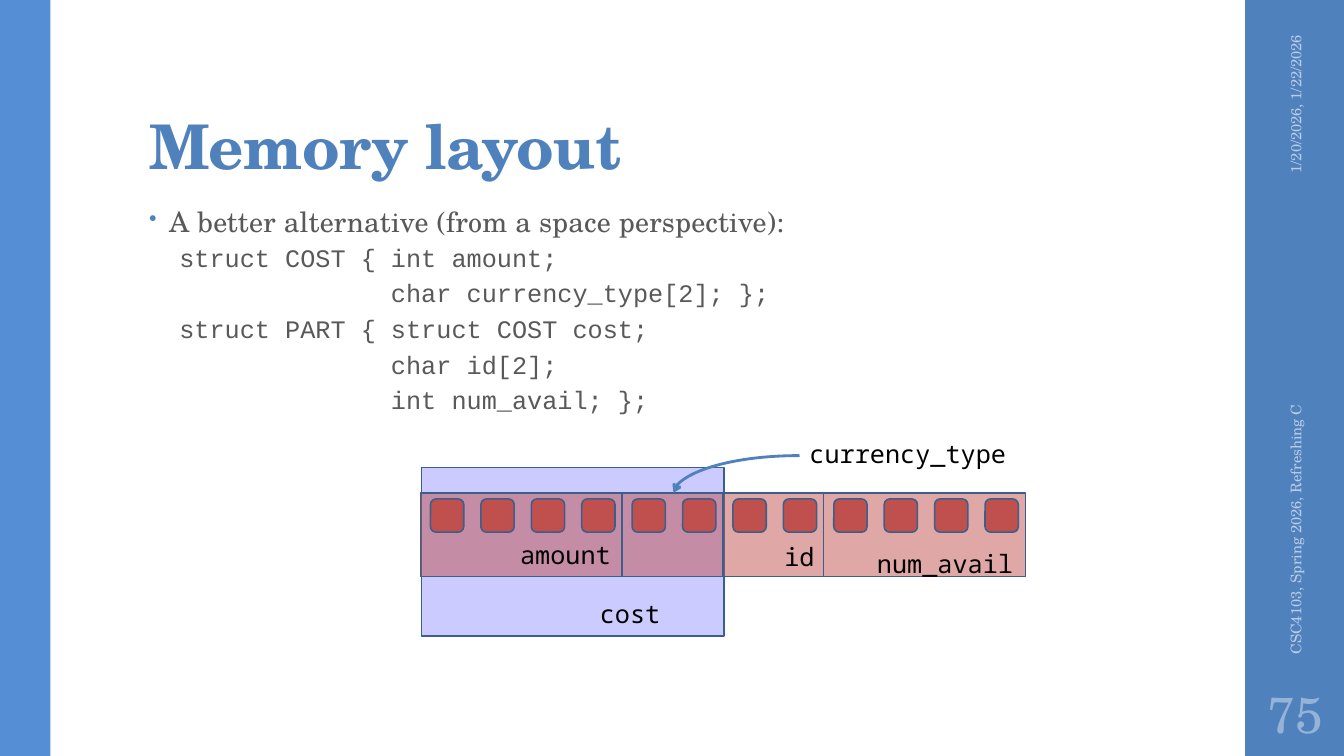
from dataclasses import dataclass

from lxml import etree
from pptx import Presentation
from pptx import util as u
from pptx.dml import color
from pptx.enum import shapes, text
from pptx.oxml import ns

PX = 9144  # 100 px to the inch
HUES = {
    "side": "4F81BD", "edge": "558ED5", "body": "595959", "cost": "9999FF",
    "byte": "C0504D", "line": "3A5F8C", "foot": "B9CDE5", "page": "95B3D7",
    "black": "000000",
}
SERIF, CODE, MONO = "TeX Gyre Schola", "Courier New", "Noto Sans Mono"
ALIGN, ANCHOR, SHAPE = text.PP_ALIGN, text.MSO_ANCHOR, shapes.MSO_SHAPE
STRUCTS = [
    "struct COST { int amount;",
    "              char currency_type[2]; };",
    "struct PART { struct COST cost;",
    "              char id[2];",
    "              int num_avail; };",
]
BYTES, PITCH = 12, 50
LEFT, TOP = 417, 489


@dataclass
class Box:
    x: int
    y: int
    w: int
    h: int

    def emu(self) -> list[u.Emu]:
        return [u.Emu(n * PX) for n in (self.x, self.y, self.w, self.h)]


@dataclass
class Style:
    font: str
    size: float
    hue: str
    bold: bool = False
    track: int = 0


@dataclass
class Label:
    words: str
    box: Box
    style: Style
    align: ALIGN = ALIGN.LEFT
    anchor: ANCHOR = ANCHOR.TOP
    inset: tuple = (10, 5, 10, 5)
    turn: int = 0
    wrap: bool = True


@dataclass
class Field:
    start: int
    count: int


def rgb(hue: str) -> color.RGBColor:
    return color.RGBColor.from_string(HUES[hue])


def add_tag(parent, tag: str, **attrs: str):
    return etree.SubElement(parent, ns.qn(tag), attrs)


def add_run(para, words: str, style: Style) -> None:
    run = para.add_run()
    run.text = words
    font = run.font
    font.name, font.size, font.bold = style.font, u.Pt(style.size), style.bold
    font.color.rgb = rgb(style.hue)
    if style.track:
        font._element.set("spc", str(style.track))


def add_frame(slide, label: Label):
    """Add an empty text box laid out as the label asks."""
    shape = slide.shapes.add_textbox(*label.box.emu())
    shape.rotation = label.turn
    frame = shape.text_frame
    frame.word_wrap = label.wrap
    frame.vertical_anchor = label.anchor
    (frame.margin_left, frame.margin_top,
     frame.margin_right, frame.margin_bottom) = [u.Emu(n * PX) for n in label.inset]
    return frame


def add_label(slide, label: Label) -> None:
    para = add_frame(slide, label).paragraphs[0]
    para.alignment = label.align
    add_run(para, label.words, label.style)


def add_block(slide, box: Box, hue: str, kind=SHAPE.RECTANGLE,
              line: bool = True, clear: bool = False) -> None:
    """Add a filled shape; clear makes its fill half transparent."""
    shape = slide.shapes.add_shape(kind, *box.emu())
    shape.shadow.inherit = False
    shape.fill.solid()
    shape.fill.fore_color.rgb = rgb(hue)
    if clear:
        fill = shape._element.spPr.find(ns.qn("a:solidFill"))
        add_tag(fill[0], "a:alpha", val="50000")
    if line:
        shape.line.color.rgb = rgb("line")
        shape.line.width = u.Pt(1.1)
    else:
        shape.line.fill.background()


def add_body(slide, label: Label) -> None:
    """Add the bullet line and the struct code below it."""
    frame = add_frame(slide, label)
    para = frame.paragraphs[0]
    props = para._p.get_or_add_pPr()
    props.set("marL", str(20 * PX))
    props.set("indent", str(-20 * PX))
    tint = add_tag(props, "a:buClr")
    add_tag(tint, "a:srgbClr", val=HUES["side"])
    add_tag(props, "a:buSzPct", val="80000")
    add_tag(props, "a:buChar", char="•")
    para.line_spacing, para.space_after = 0.95, u.Pt(2)
    add_run(para, label.words, label.style)
    code = Style(CODE, 18, "body")
    for words in STRUCTS:
        para = frame.add_paragraph()
        para.level = 1
        props = para._p.get_or_add_pPr()
        props.set("marL", str(30 * PX))
        props.set("indent", "0")
        para.line_spacing = 0.9
        para.space_before = para.space_after = u.Pt(3)
        add_run(para, words, code)


def add_arrow(slide, x1: int, y1: int, x2: int, y2: int) -> None:
    """Add a quarter-bend arrow that leaves sideways and lands from above."""
    ends = [u.Emu(n * PX) for n in (x1, y1, x2, y2)]
    arrow = slide.shapes.add_connector(shapes.MSO_CONNECTOR.CURVE, *ends)
    arrow.line.color.rgb = rgb("side")
    arrow.line.width = u.Pt(2)
    props = arrow._element.spPr
    props.find(ns.qn("a:prstGeom")).set("prst", "curvedConnector2")
    add_tag(props.find(ns.qn("a:ln")), "a:tailEnd", type="arrow")
    add_tag(props, "a:effectLst")


def main() -> None:
    deck = Presentation()
    deck.slide_width, deck.slide_height = u.Emu(1333 * PX), u.Emu(750 * PX)
    slide = deck.slides.add_slide(deck.slide_layouts[6])

    add_block(slide, Box(1235, 0, 98, 750), "side", line=False)
    add_block(slide, Box(0, 0, 50, 750), "edge", line=False)
    add_label(slide, Label("Memory layout", Box(138, 32, 1060, 153),
                           Style(SERIF, 44, "side", True, -50),
                           anchor=ANCHOR.BOTTOM, inset=(10, 3, 10, 5)))
    add_body(slide, Label("A better alternative (from a space perspective):",
                          Box(138, 200, 940, 476),
                          Style(SERIF, 20, "body", track=10)))

    add_block(slide, Box(LEFT + 1, 464, 6 * PITCH, 167), "cost", clear=True)
    for field in (Field(8, 4), Field(4, 2), Field(0, 4), Field(6, 2)):
        box = Box(LEFT + field.start * PITCH, TOP, field.count * PITCH, 83)
        add_block(slide, box, "byte", clear=True)
    for i in range(BYTES):
        box = Box(LEFT + 10 + i * PITCH, TOP + 6, 33, 33)
        add_block(slide, box, "byte", SHAPE.ROUNDED_RECTANGLE)

    mono = Style(MONO, 18, "black")
    for words, x, y, w in (("id", 768, 532, 51), ("amount", 506, 530, 112),
                           ("num_avail", 860, 539, 157), ("cost", 585, 589, 81),
                           ("currency_type", 793, 430, 218)):
        add_label(slide, Label(words, Box(x, y, w, 40), mono, wrap=False))
    add_arrow(slide, 793, 452, 668, TOP)

    foot = Style(SERIF, 10.5, "foot")
    add_label(slide, Label("1/20/2026, 1/22/2026", Box(1181, 109, 208, 40), foot,
                           ALIGN.RIGHT, ANCHOR.MIDDLE, turn=270))
    add_label(slide, Label("CSC4103, Spring 2026, Refreshing C",
                           Box(1089, 443, 392, 40), foot,
                           anchor=ANCHOR.MIDDLE, turn=270))
    add_label(slide, Label("75", Box(1235, 675, 100, 65), Style(SERIF, 36, "page"),
                           ALIGN.CENTER, ANCHOR.MIDDLE, (5, 5, 5, 5)))
    deck.save("out.pptx")


if __name__ == "__main__":
    main()
